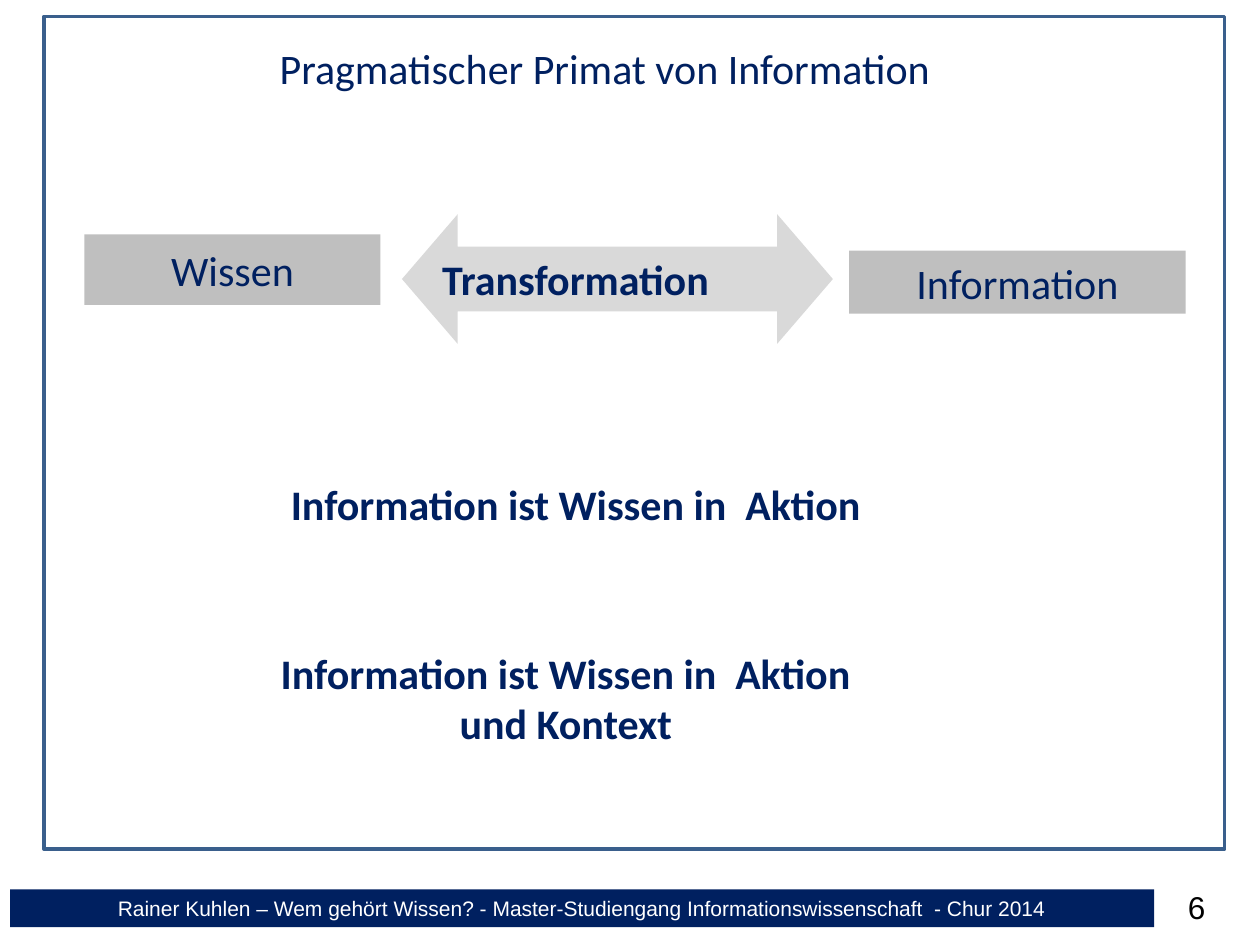
"""Build the slide on the pragmatic primacy of information."""
import pptx
import pptx.dml.color
import pptx.enum.shapes
import pptx.enum.text
import pptx.util

Inches = pptx.util.Inches
Pt = pptx.util.Pt
RGBColor = pptx.dml.color.RGBColor
Shape = pptx.enum.shapes.MSO_SHAPE
Anchor = pptx.enum.text.MSO_ANCHOR
Align = pptx.enum.text.PP_ALIGN

NAVY = RGBColor(0x00, 0x20, 0x60)
BLUE = RGBColor(0x3A, 0x5F, 0x8C)
GREY = RGBColor(0xBF, 0xBF, 0xBF)
LIGHT_GREY = RGBColor(0xD9, 0xD9, 0xD9)
WHITE = RGBColor(0xFF, 0xFF, 0xFF)
BLACK = RGBColor(0x00, 0x00, 0x00)


def write(box, text, size=24, font="Calibri", color=NAVY, bold=False,
          align=Align.CENTER, anchor=Anchor.TOP, wrap=True):
    """Put one formatted paragraph into a box."""
    frame = box.text_frame
    frame.text = text
    frame.word_wrap = wrap
    frame.auto_size = pptx.enum.text.MSO_AUTO_SIZE.NONE
    frame.vertical_anchor = anchor
    para = frame.paragraphs[0]
    para.alignment = align
    for span in para.runs:
        span.font.size = Pt(size)
        span.font.name = font
        span.font.bold = bold
        span.font.color.rgb = color


def add_block(page, kind, place, fill, line=None, width=0):
    """Add a flat filled shape, outlined only when a line colour is given."""
    block = page.shapes.add_shape(kind, *map(Inches, place))
    block.shadow.inherit = False
    block.fill.solid()
    block.fill.fore_color.rgb = fill
    if line is None:
        block.line.fill.background()
    else:
        block.line.color.rgb = line
        block.line.width = Pt(width)
    return block


def add_text(page, place, text, **style):
    """Add a text box with one formatted paragraph."""
    write(page.shapes.add_textbox(*map(Inches, place)), text, **style)


def add_title(page, place, text):
    """Place the title placeholder in front of the frame."""
    title = page.shapes.title
    title.left, title.top, title.width, title.height = map(Inches, place)
    title.fill.solid()
    title.fill.fore_color.rgb = WHITE
    write(title, text)
    page.shapes.element.append(title.element)


def add_footer(page):
    """Add the footer bar and the page number."""
    bar = add_block(page, Shape.RECTANGLE, (0.08, 7.06, 9.08, 0.3), NAVY)
    write(bar, "Rainer Kuhlen – Wem gehört Wissen? - Master-Studiengang "
          "Informationswissenschaft  - Chur 2014",
          size=12, font="Arial", color=WHITE, anchor=Anchor.MIDDLE)
    add_text(page, (9.33, 7, 0.58, 0.4), "6", size=18, font="Arial",
             color=BLACK, align=Align.LEFT)


def add_transformation(page):
    """Add the two concepts and the double arrow between them."""
    for place, text in (((0.67, 1.86, 2.35, 0.56), "Wissen"),
                        ((6.74, 1.99, 2.67, 0.5), "Information")):
        concept = add_block(page, Shape.RECTANGLE, place, GREY)
        write(concept, text, anchor=Anchor.MIDDLE)
    arrow = add_block(page, Shape.LEFT_RIGHT_ARROW, (3.19, 1.7, 3.42, 1.03), LIGHT_GREY)
    arrow.adjustments[0] = 0.5
    arrow.adjustments[1] = 0.43
    write(arrow, "Transformation", bold=True, align=Align.LEFT,
          anchor=Anchor.MIDDLE, wrap=False)


def main():
    """Build and save the deck."""
    deck = pptx.Presentation()
    deck.slide_width, deck.slide_height = Inches(10), Inches(7.5)
    page = deck.slides.add_slide(deck.slide_layouts[5])
    add_footer(page)
    add_block(page, Shape.RECTANGLE, (0.35, 0.13, 9.37, 6.61), WHITE, BLUE, 2)
    add_transformation(page)
    thesis = "Information ist Wissen in\u00a0 Aktion".replace("\u00a0", chr(160))
    add_text(page, (1.93, 3.75, 5.28, 0.5), thesis, bold=True)
    add_title(page, (1.69, 0.29, 6.22, 0.5), "Pragmatischer Primat von Information")
    add_text(page, (1.85, 5.09, 5.28, 0.91), thesis + " und Kontext", bold=True)
    deck.save("out.pptx")


if __name__ == "__main__":
    main()
